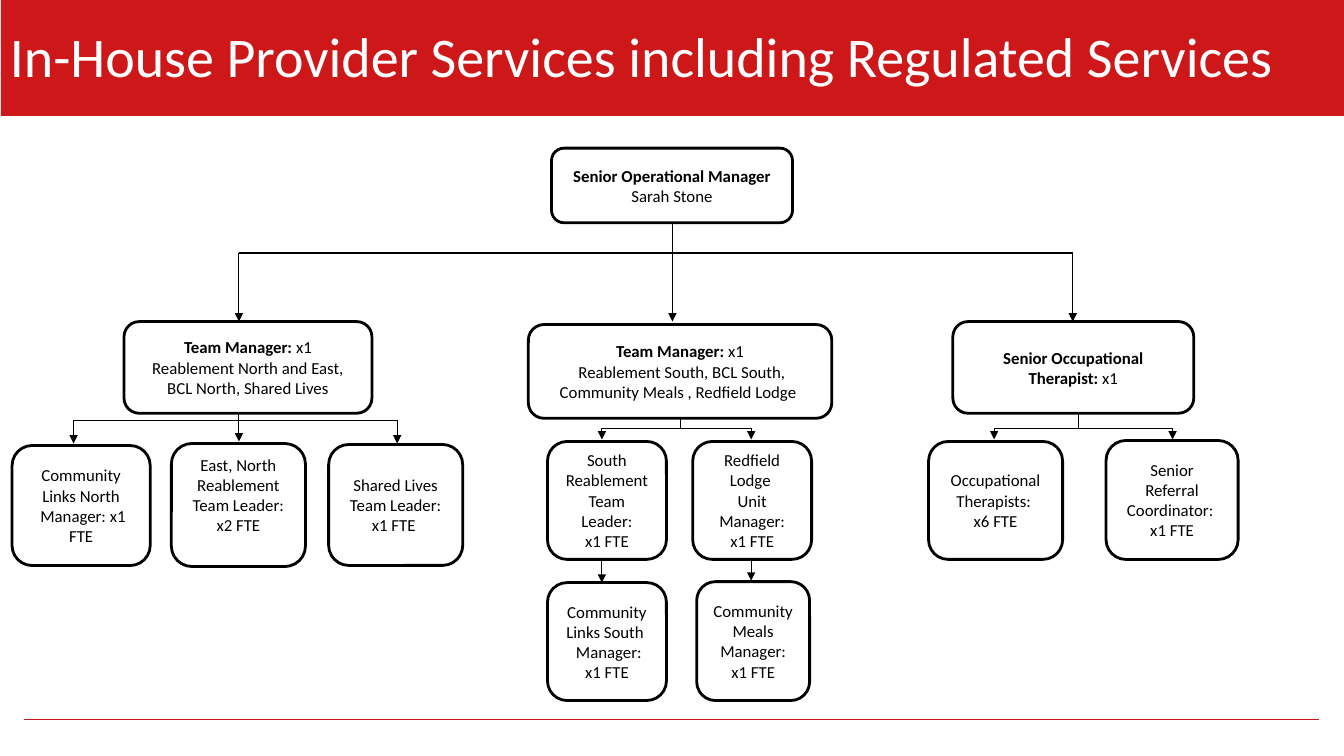
from lxml.etree import SubElement
from pptx import Presentation
from pptx.dml.color import RGBColor
from pptx.enum.shapes import MSO_CONNECTOR as Connector, MSO_SHAPE as Shape
from pptx.enum.text import MSO_ANCHOR as Anchor, PP_ALIGN as Align
from pptx.oxml.ns import qn
from pptx.util import Pt

PX = 9144
FONT = "Calibri"
COLOURS = {"banner": "CD1719", "rule": "CB1719", "ink": "000000", "paper": "FFFFFF"}

ROLES = [
    ((547, 147, 239, 74), [("Senior Operational Manager", ""), ("", "Sarah Stone")]),
    ((123, 319, 246, 91), [("Team Manager: ", "x1"),
                           ("", "Reablement North and East, BCL North, Shared Lives")]),
    ((524, 322, 301, 93), [("Team Manager: ", "x1"),
                           ("", " Reablement South, BCL South, Community Meals , Redfield Lodge ")]),
    ((945, 319, 239, 91), [("Senior Occupational Therapist:", " x1")]),
    ((12, 442, 137, 119), [("", "Community Links North"), ("", " Manager: x1 FTE")]),
    ((326, 441, 133, 120), [("", "Shared Lives"), ("", "Team Leader: x1 FTE ")]),
    ((543, 438, 118, 117), [("", "South Reablement"), ("", "Team Leader:"), ("", "x1 FTE")]),
    ((687, 438, 118, 117), [("", "Redfield Lodge "), ("", "Unit Manager:"), ("", "x1 FTE")]),
    ((543, 578, 118, 117), [("", "Community Links South "), ("", " Manager:"), ("", "x1 FTE")]),
    ((691, 577, 112, 118), [("", "Community Meals Manager:"), ("", "x1 FTE")]),
    ((921, 438, 133, 117), [("", "Occupational Therapists: "), ("", "x6 FTE")]),
    ((1097, 437, 131, 118), [("", "Senior Referral Coordinator: "), ("", "x1 FTE")]),
]
RAISED_ROLE = ((170, 440, 133, 122),
               [("", "East, North Reablement"), ("", "Team Leader: x2 FTE")])


def rgb(name):
    """Return the named colour."""
    return RGBColor.from_string(COLOURS[name])


def style_run(run, size, colour, bold=False):
    """Set the font of one run."""
    run.font.name = FONT
    run.font.size = Pt(size)
    run.font.bold = bold
    run.font.color.rgb = rgb(colour)


def add_line(slide, start, end, arrow=False, weight=0.75, colour="ink"):
    """Draw a straight line, with an arrowhead at its end if asked."""
    line = slide.shapes.add_connector(
        Connector.STRAIGHT, *(value * PX for value in (*start, *end)))
    line.line.color.rgb = rgb(colour)
    line.line.width = Pt(weight)
    if arrow:
        SubElement(line.line._get_or_add_ln(), qn("a:tailEnd"), type="triangle")
    SubElement(line._element.spPr, qn("a:effectLst"))


def add_branch(slide, bar_y, child_xs, tip_y):
    """Draw a horizontal bar with an arrow down to each child."""
    add_line(slide, (child_xs[0], bar_y), (child_xs[-1], bar_y))
    for child_x in child_xs:
        add_line(slide, (child_x, bar_y), (child_x, tip_y), arrow=True)


def add_panel(slide, kind, bounds, fill):
    """Draw a filled shape without a shadow."""
    panel = slide.shapes.add_shape(kind, *(value * PX for value in bounds))
    panel.shadow.inherit = False
    panel.fill.solid()
    panel.fill.fore_color.rgb = rgb(fill)
    panel.line.fill.background()
    return panel


def add_role(slide, bounds, lines, bottom_inset=5):
    """Draw a rounded role box from pairs of bold and plain text."""
    role = add_panel(slide, Shape.ROUNDED_RECTANGLE, bounds, "paper")
    role.line.color.rgb = rgb("ink")
    role.line.width = Pt(2)
    frame = role.text_frame
    frame.word_wrap = True
    frame.vertical_anchor = Anchor.MIDDLE
    frame.margin_bottom = bottom_inset * PX
    for index, (heading, detail) in enumerate(lines):
        paragraph = frame.paragraphs[0] if index == 0 else frame.add_paragraph()
        paragraph.alignment = Align.CENTER
        for text, bold in ((heading, True), (detail, False)):
            if text:
                run = paragraph.add_run()
                run.text = text
                style_run(run, 12, "ink", bold)


def add_title(slide, bounds, text):
    """Write the slide title."""
    title = slide.shapes.add_textbox(*(value * PX for value in bounds))
    frame = title.text_frame
    frame.word_wrap = True
    frame.vertical_anchor = Anchor.MIDDLE
    frame.text = text
    frame.paragraphs[0].line_spacing = 0.9
    style_run(frame.paragraphs[0].runs[0], 40, "paper")


def add_links(slide):
    """Draw the reporting lines of the chart."""
    add_line(slide, (667, 184), (667, 319), arrow=True, weight=1)
    add_branch(slide, 251, (237, 1064), 319)
    add_line(slide, (237, 392), (237, 438), arrow=True)
    add_branch(slide, 417, (73, 394), 440)
    for trunk_x, child_xs in ((675, (597, 745)), (1070, (986, 1163))):
        add_line(slide, (trunk_x, 392), (trunk_x, 425))
        add_branch(slide, 425, child_xs, 436)
    for manager_x, tip_y in ((597, 578), (745, 576)):
        add_line(slide, (manager_x, 470), (manager_x, tip_y), arrow=True)


def main():
    """Build and save the slide."""
    deck = Presentation()
    deck.slide_width = 1333 * PX
    deck.slide_height = 750 * PX
    slide = deck.slides.add_slide(deck.slide_layouts[6])
    add_line(slide, (24, 713), (1308, 713), weight=0.25, colour="rule")
    add_panel(slide, Shape.RECTANGLE, (1, 0, 1333, 115), "banner")
    add_title(slide, (0, 11, 1320, 96),
              "In-House Provider Services including Regulated Services")
    add_links(slide)
    for bounds, lines in ROLES:
        add_role(slide, bounds, lines)
    add_role(slide, *RAISED_ROLE, bottom_inset=25)
    deck.save("out.pptx")


if __name__ == "__main__":
    main()
